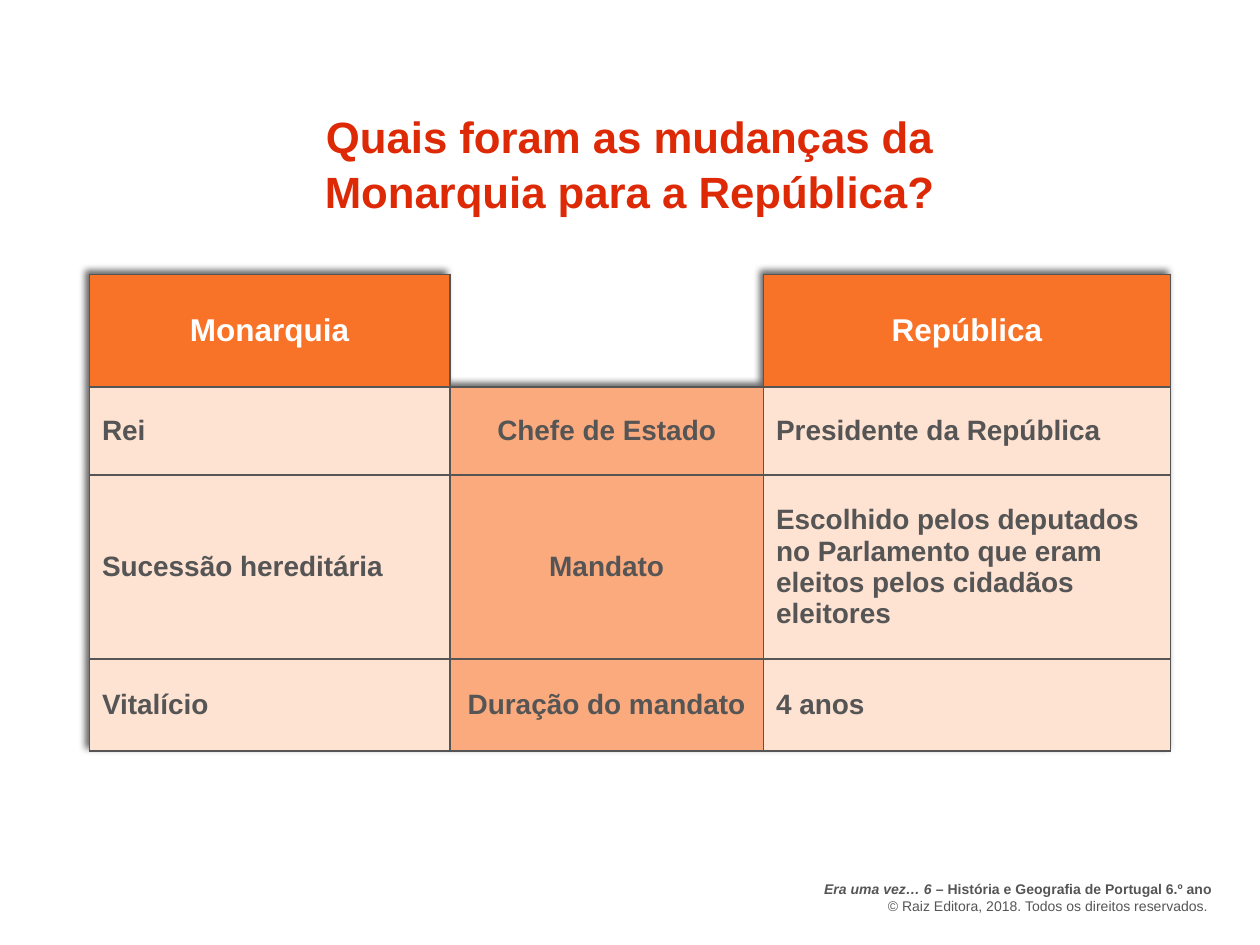
from lxml import etree
from pptx import Presentation
from pptx.dml.color import RGBColor
from pptx.enum.text import MSO_ANCHOR, PP_ALIGN
from pptx.oxml.ns import qn
from pptx.util import Inches, Pt

LEFT, CENTER, RIGHT = PP_ALIGN.LEFT, PP_ALIGN.CENTER, PP_ALIGN.RIGHT
MIDDLE, TOP = MSO_ANCHOR.MIDDLE, MSO_ANCHOR.TOP

RED = RGBColor(0xDD, 0x29, 0x05)
GREY = RGBColor(0x55, 0x55, 0x55)
WHITE = RGBColor(0xFF, 0xFF, 0xFF)
ORANGE = RGBColor(0xF8, 0x72, 0x28)
MID_ORANGE = RGBColor(0xFB, 0xAA, 0x7D)
PALE_ORANGE = RGBColor(0xFE, 0xE2, 0xD2)

COLUMN_WIDTHS = (2.86, 2.49, 3.23)
ROW_HEIGHTS = (0.89, 0.7, 1.46, 0.73)
ROWS = (
    ("Monarquia", "", "República"),
    ("Rei", "Chefe de Estado", "Presidente da República"),
    ("Sucessão hereditária", "Mandato",
     "Escolhido pelos deputados no Parlamento que eram eleitos pelos cidadãos eleitores"),
    ("Vitalício", "Duração do mandato", "4 anos"),
)


def add_run(paragraph, text, size, color, bold=True, italic=False):
    run = paragraph.add_run()
    run.text = text
    run.font.color.rgb = color
    font_format = {"name": "Arial", "size": Pt(size), "bold": bold, "italic": italic}
    for name, value in font_format.items():
        setattr(run.font, name, value)


def add_text_frame(slide, box, anchor, side_margin):
    frame = slide.shapes.add_textbox(*map(Inches, box)).text_frame
    frame_format = {"word_wrap": True, "vertical_anchor": anchor,
                    "margin_left": Inches(side_margin), "margin_right": Inches(side_margin)}
    for name, value in frame_format.items():
        setattr(frame, name, value)
    return frame


def add_title(slide, box):
    paragraph = add_text_frame(slide, box, MIDDLE, 0.2).paragraphs[0]
    paragraph.alignment = CENTER
    paragraph.line_spacing = 1.05
    add_run(paragraph, "Quais foram as mudanças da Monarquia para a República?", 25, RED)


def add_footer(slide, box):
    frame = add_text_frame(slide, box, TOP, 0.1)
    book, rights = frame.paragraphs[0], frame.add_paragraph()
    book.alignment = rights.alignment = RIGHT
    add_run(book, "Era uma vez… 6 ", 8, GREY, italic=True)
    add_run(book, "– História e Geografia de Portugal 6.º ano", 8, GREY)
    add_run(rights, "© Raiz Editora, 2018. Todos os direitos reservados. ", 8, GREY, bold=False)


def add_color(parent, color):
    return etree.SubElement(parent, qn("a:srgbClr"), val=str(color))


def set_borders(cell, sides):
    """Draw a 1 pt line on the given sides (L, R, T, B); leave the others bare."""
    properties = cell._tc.get_or_add_tcPr()
    for position, side in enumerate("LRTB"):
        line = etree.Element(qn(f"a:ln{side}"), w=str(Pt(1)))
        if side in sides:
            add_color(etree.SubElement(line, qn("a:solidFill")), GREY)
        else:
            etree.SubElement(line, qn("a:noFill"))
        properties.insert(position, line)


def add_table_shadow(table):
    """Cast a soft shadow up and to the left of the table."""
    effects = etree.Element(qn("a:effectLst"))
    shadow = etree.SubElement(effects, qn("a:outerShdw"), blurRad=str(Pt(4)),
                              dist=str(Pt(3)), dir="13500000", algn="br", rotWithShape="0")
    color = add_color(shadow, RGBColor(0, 0, 0))
    etree.SubElement(color, qn("a:alpha"), val="60000")
    table._tbl.tblPr.insert(0, effects)


def fill_cell(cell, text, is_header, is_middle):
    cell.vertical_anchor = MIDDLE
    if not text:
        cell.fill.background()
        set_borders(cell, "LRB")
        return
    cell.fill.solid()
    cell.fill.fore_color.rgb = (
        ORANGE if is_header else MID_ORANGE if is_middle else PALE_ORANGE)
    set_borders(cell, "LRTB")
    paragraph = cell.text_frame.paragraphs[0]
    paragraph.alignment = CENTER if is_header or is_middle else LEFT
    add_run(paragraph, text, 18 if is_header else 16, WHITE if is_header else GREY)


def add_comparison_table(slide, left, top):
    box = (left, top, sum(COLUMN_WIDTHS), sum(ROW_HEIGHTS))
    table = slide.shapes.add_table(
        len(ROWS), len(COLUMN_WIDTHS), *map(Inches, box)).table
    table.first_row = table.horz_banding = False
    for column, width in zip(table.columns, COLUMN_WIDTHS):
        column.width = Inches(width)
    for row, height in zip(table.rows, ROW_HEIGHTS):
        row.height = Inches(height)
    for row_index, texts in enumerate(ROWS):
        for column_index, text in enumerate(texts):
            fill_cell(table.cell(row_index, column_index), text,
                      row_index == 0, column_index == 1)
    add_table_shadow(table)


def main():
    presentation = Presentation()
    presentation.slide_width, presentation.slide_height = Inches(10), Inches(7.5)
    slide = presentation.slides.add_slide(presentation.slide_layouts[6])
    add_footer(slide, (6.19, 6.94, 3.53, 0.37))
    add_title(slide, (1.57, 0.78, 6.85, 1.02))
    add_comparison_table(slide, 0.71, 2.18)
    presentation.save("out.pptx")


if __name__ == "__main__":
    main()
